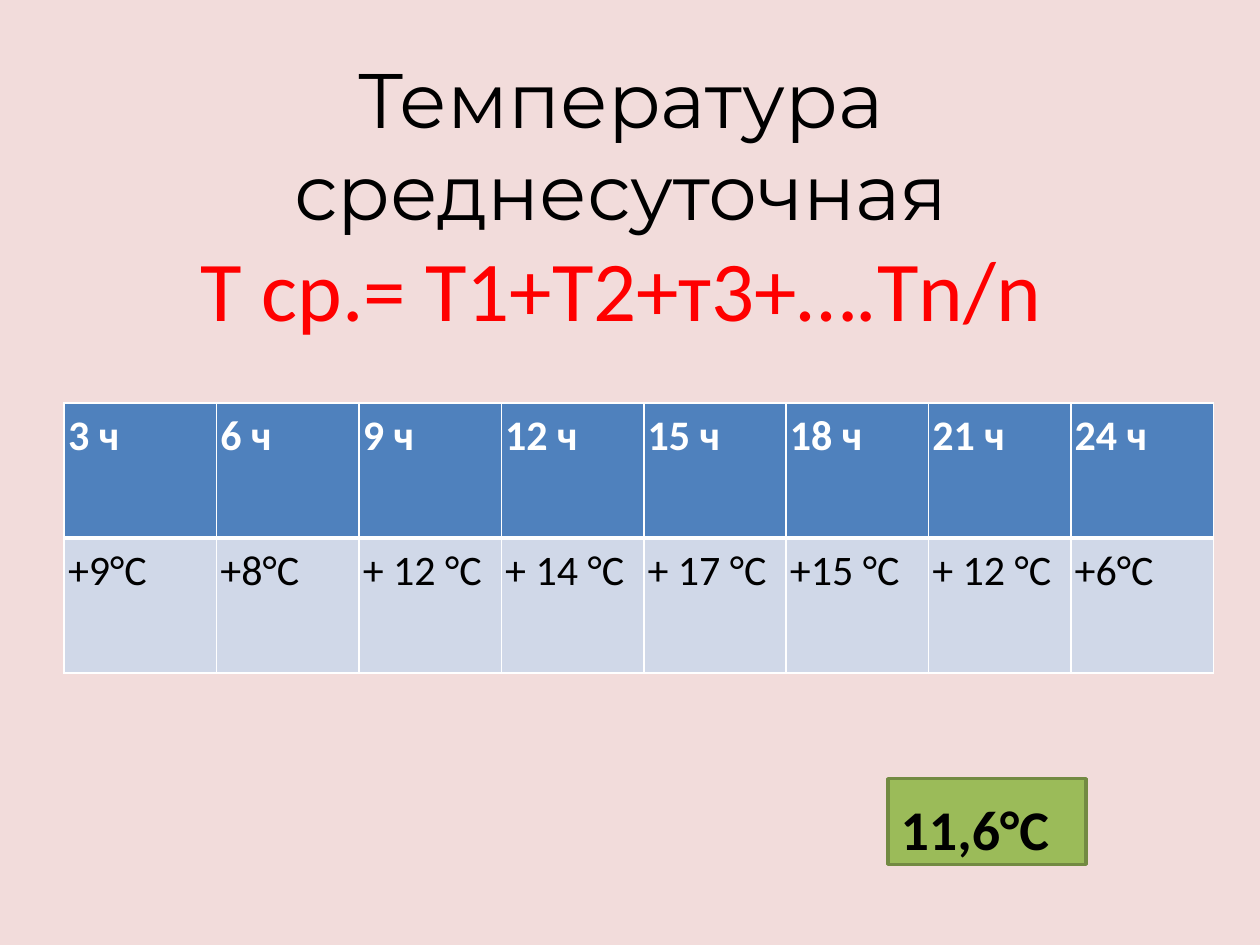
from dataclasses import dataclass
from typing import NamedTuple

from lxml.etree import SubElement
from pptx import Presentation
from pptx.dml.color import RGBColor
from pptx.enum.shapes import MSO_SHAPE
from pptx.enum.text import MSO_ANCHOR, PP_ALIGN
from pptx.oxml.ns import qn
from pptx.util import Inches, Pt


@dataclass(frozen=True)
class Theme:
    background: str = "F2DCDB"
    text: str = "000000"
    formula: str = "FF0000"
    header_text: str = "FFFFFF"
    header_fill: str = "4F81BD"
    value_fill: str = "D0D8E8"
    border: str = "FFFFFF"
    result_fill: str = "9BBB59"
    result_line: str = "738A42"
    title_font: str = "Montserrat"
    body_font: str = "Calibri"
    title_size: float = 44.1
    formula_size: float = 48.6
    table_size: float = 24
    result_size: float = 32


class Reading(NamedTuple):
    hour: str
    temperature: str


THEME = Theme()
READINGS = [
    Reading("3 ч", "+9°С"),
    Reading("6 ч", "+8°С"),
    Reading("9 ч", "+ 12 °С"),
    Reading("12 ч", "+ 14 °С"),
    Reading("15 ч", "+ 17 °С"),
    Reading("18 ч", "+15 °С"),
    Reading("21 ч", "+ 12 °С"),
    Reading("24 ч", "+6°С"),
]
FIRST_COLUMN, OTHER_COLUMN, ROW_HEIGHT = 1.21, 1.13, 1.07
THIN, THICK = 1, 3


def rgb(color: str) -> RGBColor:
    return RGBColor.from_string(color)


def write_text(paragraph, text: str, *, size: float, color: str = THEME.text,
               font: str = THEME.body_font, bold: bool = False,
               align=PP_ALIGN.LEFT, line_spacing: float = 1.15,
               space_after: float = 10) -> None:
    """Append a formatted run and set the format of its paragraph."""
    paragraph.alignment = align
    paragraph.line_spacing = line_spacing
    paragraph.space_after = Pt(space_after)
    run = paragraph.add_run()
    run.text = text
    run.font.name = font
    run.font.size = Pt(size)
    run.font.bold = bold
    run.font.color.rgb = rgb(color)


def add_title(slide) -> None:
    shape = slide.shapes.add_textbox(Inches(0.43), Inches(0.92), Inches(9), Inches(1.25))
    frame = shape.text_frame
    frame.word_wrap = True
    frame.vertical_anchor = MSO_ANCHOR.MIDDLE
    paragraph = frame.paragraphs[0]
    layout = dict(align=PP_ALIGN.CENTER, line_spacing=1.0, space_after=0)
    write_text(paragraph, "Температура среднесуточная", size=THEME.title_size,
               font=THEME.title_font, **layout)
    paragraph.add_line_break()
    write_text(paragraph, "Т ср.= Т1+Т2+т3+….Тn/n", size=THEME.formula_size,
               color=THEME.formula, **layout)


def set_borders(cell, *, top: float, bottom: float) -> None:
    properties = cell._tc.get_or_add_tcPr()
    for side, width in (("L", THIN), ("R", THIN), ("T", top), ("B", bottom)):
        line = SubElement(properties, qn(f"a:ln{side}"), w=str(Pt(width)))
        fill = SubElement(line, qn("a:solidFill"))
        SubElement(fill, qn("a:srgbClr"), val=THEME.border)


def fill_cell(cell, text: str, *, is_header: bool) -> None:
    cell.margin_left = cell.margin_right = Inches(0.03)
    cell.margin_top = cell.margin_bottom = 0
    set_borders(cell, top=THIN if is_header else THICK,
                bottom=THICK if is_header else THIN)
    cell.fill.solid()
    cell.fill.fore_color.rgb = rgb(THEME.header_fill if is_header else THEME.value_fill)
    write_text(cell.text_frame.paragraphs[0], text, size=THEME.table_size,
               color=THEME.header_text if is_header else THEME.text, bold=is_header)


def add_readings_table(slide, readings: list[Reading]) -> None:
    widths = [FIRST_COLUMN] + [OTHER_COLUMN] * (len(readings) - 1)
    table = slide.shapes.add_table(
        2, len(readings), Inches(0.51), Inches(3.2),
        Inches(sum(widths)), Inches(2 * ROW_HEIGHT)).table
    for row in table.rows:
        row.height = Inches(ROW_HEIGHT)
    for index, (reading, width) in enumerate(zip(readings, widths)):
        table.columns[index].width = Inches(width)
        fill_cell(table.cell(0, index), reading.hour, is_header=True)
        fill_cell(table.cell(1, index), reading.temperature, is_header=False)


def add_result(slide, text: str) -> None:
    shape = slide.shapes.add_shape(
        MSO_SHAPE.RECTANGLE, Inches(7.05), Inches(6.18), Inches(1.57), Inches(0.68))
    shape.shadow.inherit = False
    shape.fill.solid()
    shape.fill.fore_color.rgb = rgb(THEME.result_fill)
    shape.line.color.rgb = rgb(THEME.result_line)
    shape.line.width = Pt(2)
    shape.text_frame.word_wrap = True
    shape.text_frame.vertical_anchor = MSO_ANCHOR.TOP
    write_text(shape.text_frame.paragraphs[0], text, size=THEME.result_size, bold=True)


def main() -> None:
    presentation = Presentation()
    presentation.slide_width, presentation.slide_height = Inches(10), Inches(7.5)
    slide = presentation.slides.add_slide(presentation.slide_layouts[6])
    slide.background.fill.solid()
    slide.background.fill.fore_color.rgb = rgb(THEME.background)
    add_title(slide)
    add_readings_table(slide, READINGS)
    add_result(slide, "11,6°С")
    presentation.save("out.pptx")


if __name__ == "__main__":
    main()
